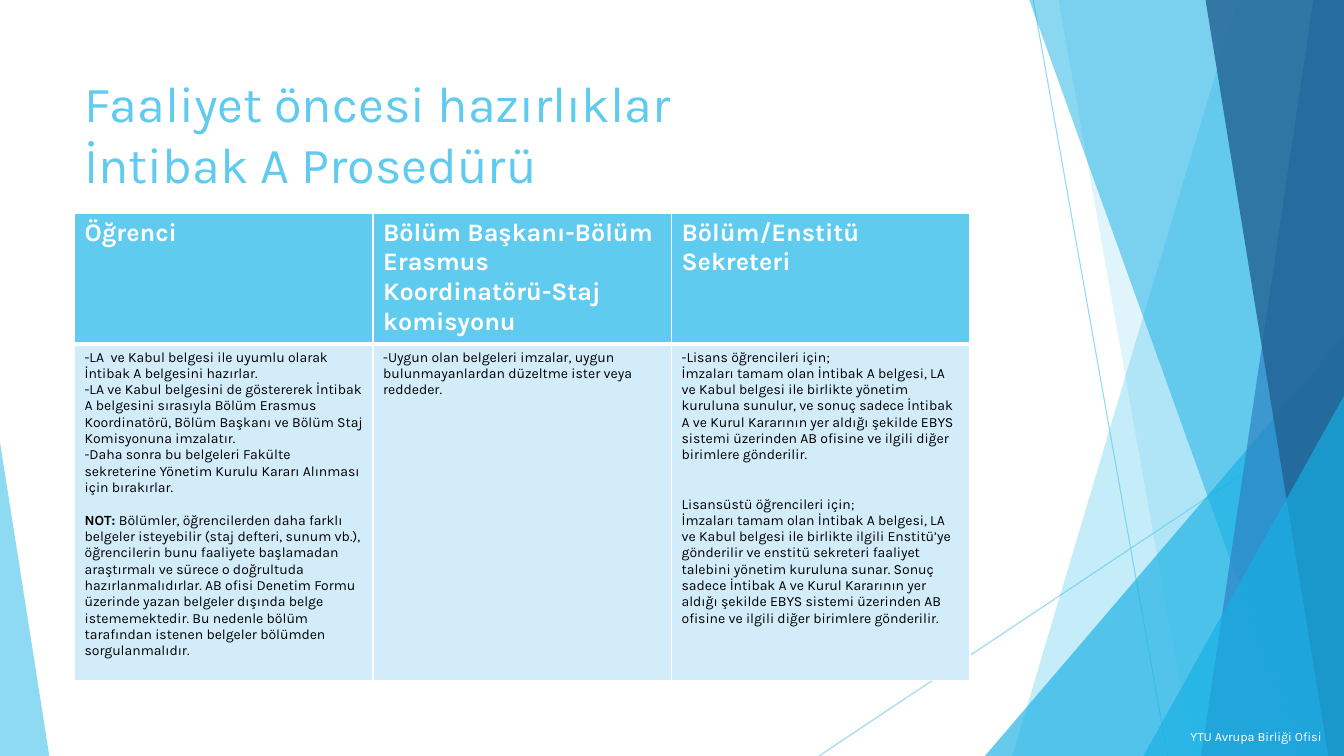
from dataclasses import dataclass

from lxml.etree import SubElement
from pptx import Presentation
from pptx.dml.color import RGBColor as Color
from pptx.enum.shapes import MSO_CONNECTOR as Connector, MSO_SHAPE as Preset
from pptx.enum.text import MSO_ANCHOR as Anchor, PP_ALIGN as Align
from pptx.oxml.ns import qn
from pptx.util import Pt

SCALE = 9525
WIDTH, HEIGHT = 1280, 720


@dataclass(frozen=True)
class Theme:
    """Colours, font and type sizes of the slide."""
    sky: str = "5FCBEF"
    cyan: str = "17B0E4"
    blue: str = "2E83C3"
    navy: str = "226292"
    pale: str = "D2ECF9"
    white: str = "FFFFFF"
    black: str = "000000"
    font: str = "Karla"
    title: int = 36
    header: int = 18
    body: int = 10
    footer: int = 9
    blank_line: float = 11.7


@dataclass(frozen=True)
class Entry:
    """A table paragraph with an optional bold lead and blank lines above."""
    text: str
    lead: str = ""
    lines_above: int = 0


THEME = Theme()

HEADERS = [
    "Öğrenci",
    "Bölüm Başkanı-Bölüm Erasmus Koordinatörü-Staj komisyonu",
    "Bölüm/Enstitü Sekreteri",
]
DUTIES = [
    [
        Entry("-LA  ve Kabul belgesi ile uyumlu olarak İntibak A belgesini hazırlar.\v"
              "-LA ve Kabul belgesini de göstererek İntibak A belgesini sırasıyla Bölüm Erasmus "
              "Koordinatörü, Bölüm Başkanı ve Bölüm Staj Komisyonuna imzalatır."),
        Entry("-Daha sonra bu belgeleri Fakülte sekreterine Yönetim Kurulu Kararı Alınması "
              "için bırakırlar."),
        Entry("Bölümler, öğrencilerden daha farklı belgeler isteyebilir (staj defteri, sunum "
              "vb.), öğrencilerin bunu faaliyete başlamadan araştırmalı ve sürece o doğrultuda "
              "hazırlanmalıdırlar. AB ofisi Denetim Formu üzerinde yazan belgeler dışında belge "
              "istememektedir. Bu nedenle bölüm tarafından istenen belgeler bölümden "
              "sorgulanmalıdır.", lead="NOT: ", lines_above=1),
    ],
    [
        Entry("-Uygun olan belgeleri imzalar, uygun bulunmayanlardan düzeltme ister veya "
              "reddeder."),
    ],
    [
        Entry("-Lisans öğrencileri için;"),
        Entry("İmzaları tamam olan İntibak A belgesi, LA ve Kabul belgesi ile birlikte yönetim "
              "kuruluna sunulur, ve sonuç sadece İntibak A ve Kurul Kararının yer aldığı "
              "şekilde EBYS sistemi üzerinden AB ofisine ve ilgili diğer birimlere gönderilir."),
        Entry("Lisansüstü öğrencileri için;", lines_above=2),
        Entry("İmzaları tamam olan İntibak A belgesi, LA ve Kabul belgesi ile birlikte ilgili "
              "Enstitü’ye gönderilir ve enstitü sekreteri faaliyet talebini yönetim kuruluna "
              "sunar. Sonuç sadece İntibak A ve Kurul Kararının yer aldığı şekilde EBYS sistemi "
              "üzerinden AB ofisine ve ilgili diğer birimlere gönderilir."),
    ],
]


def px(*lengths):
    """Turn pixel lengths into EMU."""
    return [length * SCALE for length in lengths]


def set_font(font, size, color, bold=False):
    """Apply the theme font with a size, colour and weight."""
    font.name, font.size, font.bold = THEME.font, Pt(size), bold
    font.color.rgb = Color.from_string(color)


def set_alpha(element, percent):
    """Make the colours inside an element partly transparent."""
    for color in element.iter(qn("a:srgbClr")):
        SubElement(color, qn("a:alpha"), val=str(percent * 1000))


def paint(shape, color, percent):
    """Fill a shape with a translucent colour and remove its outline."""
    shape.shadow.inherit = False
    shape.fill.solid()
    shape.fill.fore_color.rgb = Color.from_string(color)
    shape.line.fill.background()
    set_alpha(shape.element.spPr, percent)


def add_ray(slide, start, end):
    """Draw a thin translucent line."""
    ray = slide.shapes.add_connector(Connector.STRAIGHT, *px(*start, *end))
    ray.line.width = Pt(0.75)
    ray.line.color.rgb = Color.from_string(THEME.sky)
    set_alpha(ray.element.spPr, 70)
    SubElement(ray.element.spPr, qn("a:effectLst"))


def add_band(slide, box, top_x, bottom_x, color, percent):
    """Draw a band from a slanted left edge to the right side of the box."""
    left, top, width, height = box
    right, bottom = left + width, top + height
    builder = slide.shapes.build_freeform(left + top_x, top, scale=SCALE)
    builder.add_line_segments([(right, top), (right, bottom), (left + bottom_x, bottom)])
    paint(builder.convert_to_shape(), color, percent)


def add_wedge(slide, box, apex, color, percent):
    """Draw a triangle whose apex sits at a fraction of its width."""
    wedge = slide.shapes.add_shape(Preset.ISOSCELES_TRIANGLE, *px(*box))
    wedge.adjustments[0] = apex
    paint(wedge, color, percent)


def add_facets(slide, box):
    """Draw the layered blue facets along the right side."""
    left, top, width, height = box
    right, bottom = left + width, top + height
    add_ray(slide, (left + 46, top + 1), (left + 174, bottom))
    add_ray(slide, (right, top + 388), (left - 158, bottom))
    add_band(slide, box, 241, 26, THEME.sky, 36)
    add_band(slide, box, 70, 198, THEME.sky, 20)
    add_wedge(slide, (left, bottom - 400, width, 400), 1, THEME.cyan, 66)
    add_band(slide, box, 42, 301, THEME.cyan, 50)
    add_band(slide, box, 313, 206, THEME.blue, 70)
    add_band(slide, box, 210, 327, THEME.navy, 80)
    add_wedge(slide, (right - 191, bottom - 343, 191, 343), 1, THEME.cyan, 66)


def add_text(slide, box, text, size, color, anchor=Anchor.TOP, align=Align.LEFT):
    """Place a wrapped text box holding one paragraph."""
    frame = slide.shapes.add_textbox(*px(*box)).text_frame
    frame.word_wrap, frame.vertical_anchor = True, anchor
    paragraph = frame.paragraphs[0]
    paragraph.text, paragraph.alignment = text, align
    set_font(paragraph.font, size, color)


def style_cell(cell, fill, top, bottom):
    """Give a cell white borders and a solid fill."""
    properties = cell._tc.get_or_add_tcPr()
    for side, points in zip("LRTB", (1, 1, top, bottom)):
        border = SubElement(properties, qn(f"a:ln{side}"), w=str(Pt(points)))
        SubElement(SubElement(border, qn("a:solidFill")), qn("a:srgbClr"), val=THEME.white)
    cell.fill.solid()
    cell.fill.fore_color.rgb = Color.from_string(fill)


def fill_cell(cell, entries, size, color, bold=False):
    """Write the entries of a cell as paragraphs."""
    frame = cell.text_frame
    for index, entry in enumerate(entries):
        paragraph = frame.add_paragraph() if index else frame.paragraphs[0]
        paragraph.space_before = Pt(entry.lines_above * THEME.blank_line)
        set_font(paragraph.font, size, color, bold)
        if entry.lead:
            lead = paragraph.add_run()
            lead.text, lead.font.bold = entry.lead, True
            paragraph.add_run().text = entry.text
        else:
            paragraph.text = entry.text


def add_duties_table(slide, box, header_height):
    """Build the table of duties with equal columns."""
    table = slide.shapes.add_table(2, len(HEADERS), *px(*box)).table
    table.rows[0].height, table.rows[1].height = px(header_height, box[3] - header_height)
    for column, (header, entries) in enumerate(zip(HEADERS, DUTIES)):
        head, body = table.cell(0, column), table.cell(1, column)
        style_cell(head, THEME.sky, 1, 3)
        style_cell(body, THEME.pale, 3, 1)
        fill_cell(head, [Entry(header)], THEME.header, THEME.white, bold=True)
        fill_cell(body, entries, THEME.body, THEME.black)


def main():
    """Build and save the presentation."""
    presentation = Presentation()
    presentation.slide_width, presentation.slide_height = px(WIDTH, HEIGHT)
    slide = presentation.slides.add_slide(presentation.slide_layouts[6])
    add_facets(slide, (938, -1, 342, 721))
    add_wedge(slide, (0, 421, 47, 299), 0, THEME.sky, 70)
    add_text(slide, (71, 64, 902, 138), "Faaliyet öncesi hazırlıklar\vİntibak A Prosedürü",
             THEME.title, THEME.sky)
    add_duties_table(slide, (71, 203, 853, 442), 122)
    add_text(slide, (607, 682, 661, 38), "YTU Avrupa Birliği Ofisi", THEME.footer, THEME.white,
             Anchor.MIDDLE, Align.RIGHT)
    presentation.save("out.pptx")


if __name__ == "__main__":
    main()
